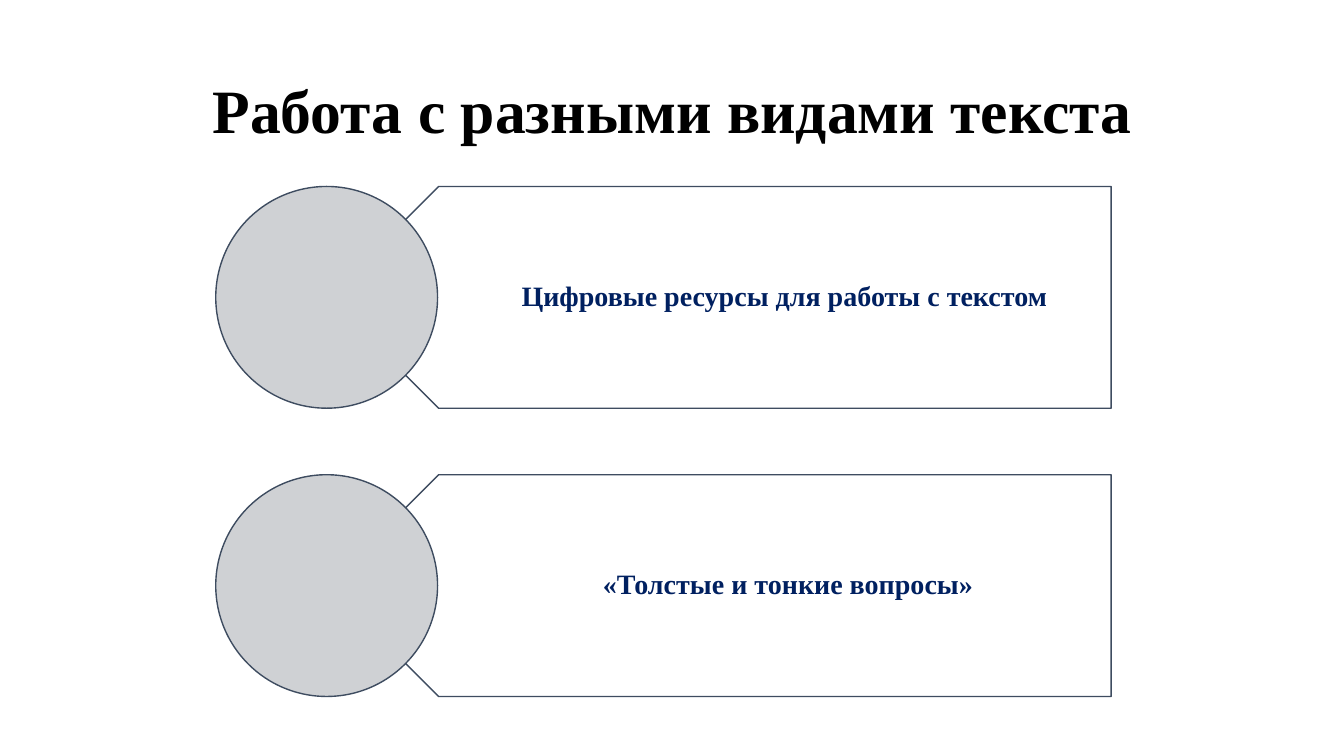
import pptx
import pptx.util
import pptx.dml.color
import pptx.enum.shapes
import pptx.enum.text

Inches = pptx.util.Inches
Pt = pptx.util.Pt
Shape = pptx.enum.shapes.MSO_SHAPE
FONT = "Times New Roman"
SIDE = 2.2
TOP = 1.85
STEP = 2.86
ROWS = ["Цифровые ресурсы для работы с текстом ", "«Толстые и тонкие вопросы»"]


def color(code):
    return pptx.dml.color.RGBColor.from_string(code)


def place(item, left, top, width, height):
    item.left, item.top = Inches(left), Inches(top)
    item.width, item.height = Inches(width), Inches(height)


def write(frame, text, size, code):
    frame.text = text
    frame.word_wrap = True
    frame.vertical_anchor = pptx.enum.text.MSO_ANCHOR.MIDDLE
    line = frame.paragraphs[0]
    line.alignment = pptx.enum.text.PP_ALIGN.CENTER
    line.line_spacing = 0.9
    font = line.runs[0].font
    font.name, font.size, font.bold = FONT, Pt(size), True
    font.color.rgb = color(code)


def add_title(slide, text):
    title = slide.shapes.title
    place(title, 0.92, 0.4, 11.5, 1.45)
    write(title.text_frame, text, 44, "000000")


def add_form(slide, kind, left, top, width, fill):
    form = slide.shapes.add_shape(
        kind, Inches(left), Inches(top), Inches(width), Inches(SIDE))
    form.shadow.inherit = False
    form.fill.solid()
    form.fill.fore_color.rgb = color(fill)
    form.line.color.rgb = color("3E4C60")
    form.line.width = Pt(1)
    return form


def add_label(slide, text, top):
    label = slide.shapes.add_textbox(
        Inches(3.8), Inches(top), Inches(7.22), Inches(SIDE))
    frame = label.text_frame
    frame.margin_left, frame.margin_right = Inches(0.97), Inches(0.16)
    frame.margin_top = frame.margin_bottom = Inches(0.08)
    write(frame, text, 20, "002060")


def add_row(slide, text, top):
    plate = add_form(slide, Shape.PENTAGON, 3.25, top, 7.77, "FFFFFF")
    plate.rotation = 180
    add_label(slide, text, top)
    add_form(slide, Shape.OVAL, 2.14, top, SIDE, "CFD1D4")


def main():
    deck = pptx.Presentation()
    deck.slide_width, deck.slide_height = Inches(13.33), Inches(7.5)
    slide = deck.slides.add_slide(deck.slide_layouts[5])
    add_title(slide, "Работа с разными видами текста")
    for index, text in enumerate(ROWS):
        add_row(slide, text, TOP + index * STEP)
    deck.save("out.pptx")


if __name__ == "__main__":
    main()
